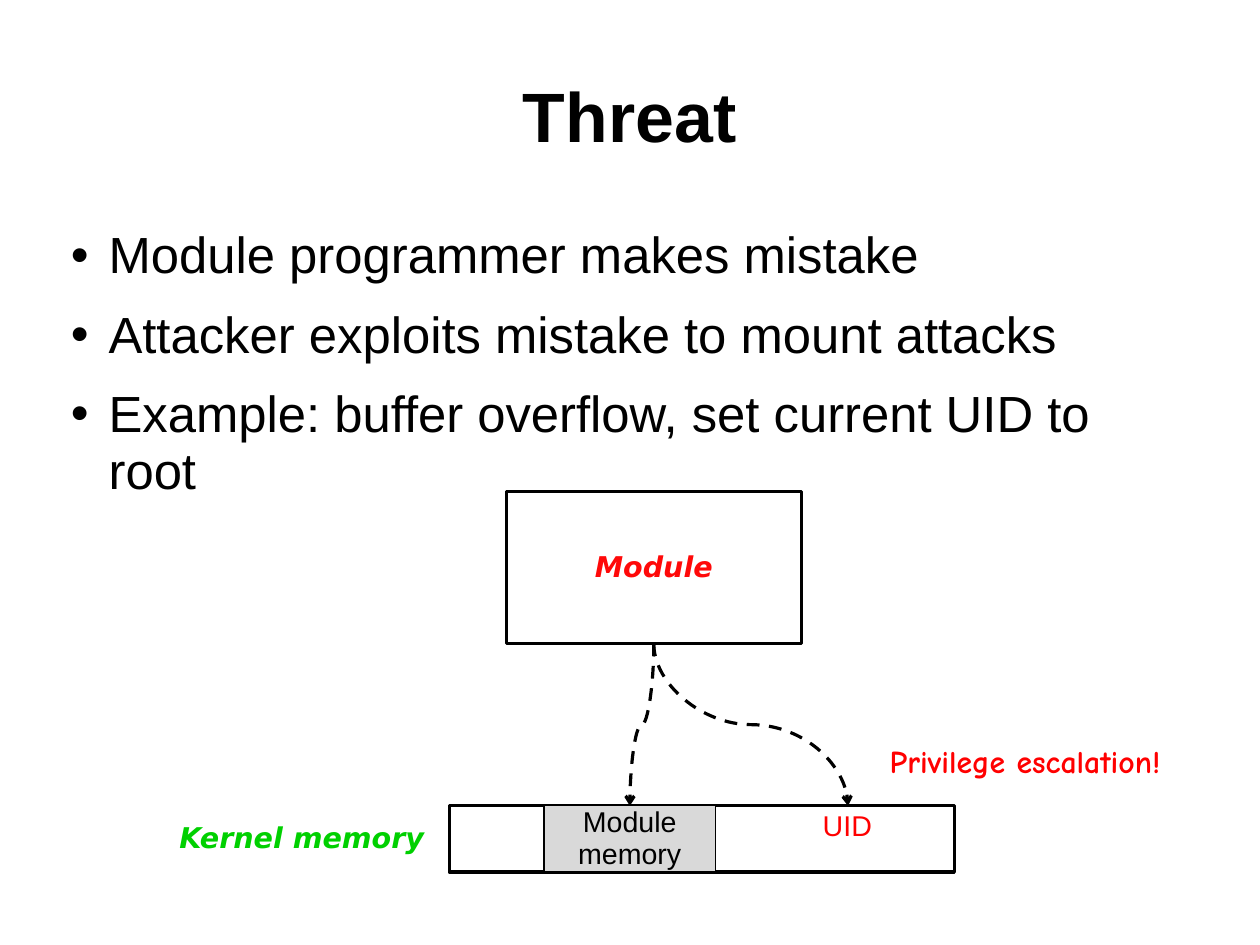
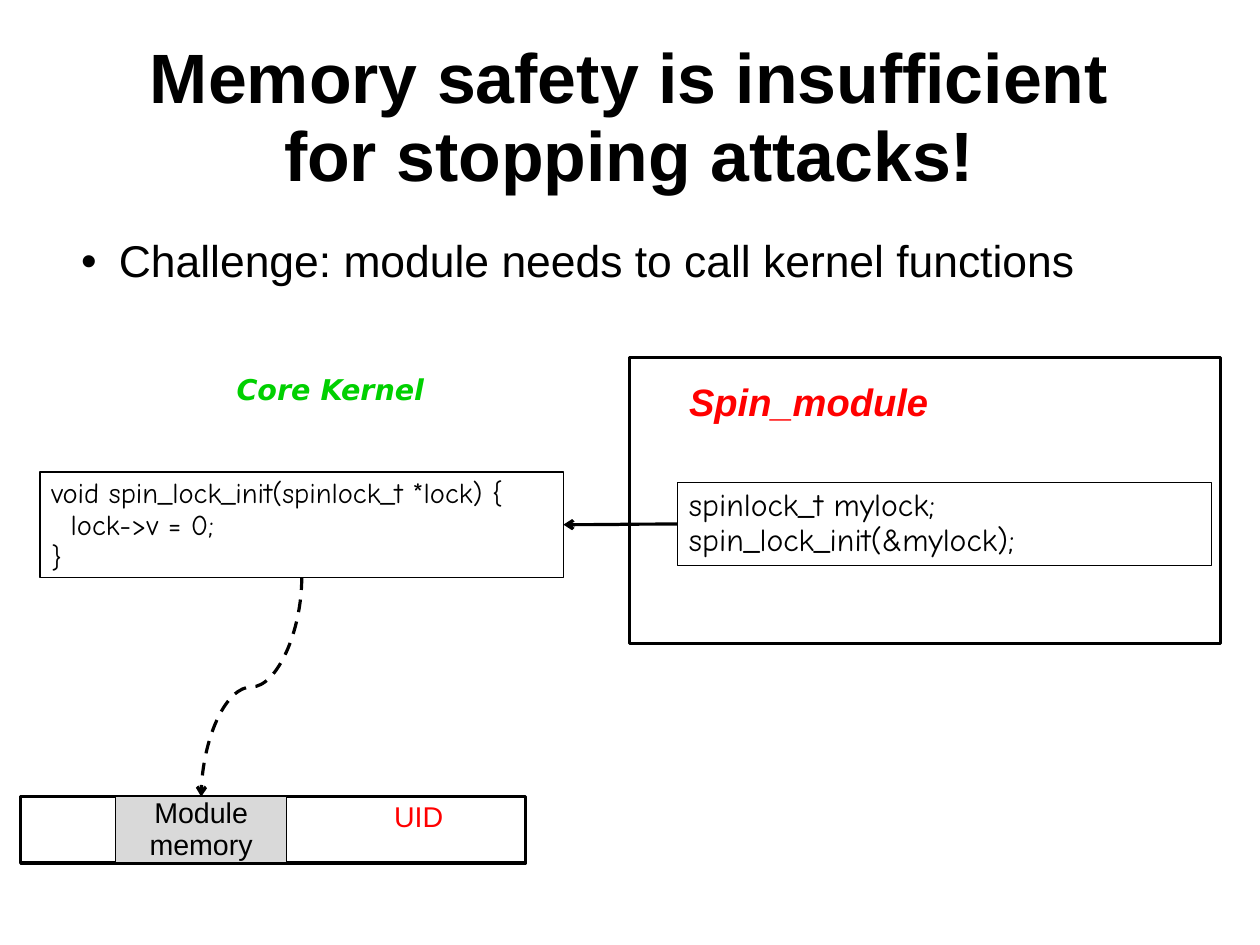
from lxml import etree
from pptx import Presentation
from pptx.dml.color import RGBColor
from pptx.enum.dml import MSO_LINE
from pptx.enum.shapes import MSO_CONNECTOR as Connector, MSO_SHAPE as Shape
from pptx.enum.text import MSO_ANCHOR as Anchor, PP_ALIGN as Align
from pptx.oxml.ns import qn
from pptx.util import Inches, Pt

COLORS = {
    "black": "000000",
    "white": "FFFFFF",
    "grey": "D9D9D9",
    "red": "FF0000",
    "module": "FF0909",
    "kernel": "00D000",
}
TOP, LEFT, BOTTOM, RIGHT = range(4)  # connection sites of a rectangle


def add_box(shapes, left, top, width, height, text="", size=18, font="Arial",
            color="black", bold=False, italic=False, align=Align.LEFT,
            anchor=Anchor.TOP, insets=(0.1, 0.05, 0.1, 0.05), wrap=True,
            bullet=False, fill=None, line=0):
    """Add a rectangle if it has a fill or line, else a text box; one paragraph per text line."""
    place = [Inches(value) for value in (left, top, width, height)]
    if fill or line:
        box = shapes.add_shape(Shape.RECTANGLE, *place)
        box.shadow.inherit = False
    else:
        box = shapes.add_textbox(*place)
    if fill:
        box.fill.solid()
        box.fill.fore_color.rgb = RGBColor.from_string(COLORS[fill])
    else:
        box.fill.background()
    if line:
        box.line.color.rgb = RGBColor.from_string(COLORS["black"])
        box.line.width = Pt(line)
    else:
        box.line.fill.background()

    frame = box.text_frame
    frame.word_wrap = wrap
    frame.vertical_anchor = anchor
    (frame.margin_left, frame.margin_top,
     frame.margin_right, frame.margin_bottom) = [Inches(inset) for inset in insets]
    if not text:
        return box
    for index, words in enumerate(text.split("\n")):
        para = frame.add_paragraph() if index else frame.paragraphs[0]
        para.alignment = align
        para.line_spacing = 0.93
        if bullet:
            para.space_after = Pt(14.2)
            properties = para._p.get_or_add_pPr()
            properties.set("marL", str(Inches(0.44)))
            properties.set("indent", str(Inches(-0.33)))
            etree.SubElement(properties, qn("a:buFont")).set("typeface", font)
            etree.SubElement(properties, qn("a:buChar")).set("char", "•")
        span = para.add_run()
        span.text = words
        span.font.size = Pt(size)
        span.font.name = font
        span.font.bold = bold
        span.font.italic = italic
        span.font.color.rgb = RGBColor.from_string(COLORS[color])
    return box


def add_arrow(slide, source, source_site, target, target_site, dashed=False):
    """Glue a curved arrow to two boxes; a dashed one leaves downwards."""
    arrow = slide.shapes.add_connector(Connector.CURVE, 0, 0, 0, 0)
    arrow.begin_connect(source, source_site)
    arrow.end_connect(target, target_site)
    arrow.line.color.rgb = RGBColor.from_string(COLORS["black"])
    arrow.line.width = Pt(2)
    if dashed:
        arrow.line.dash_style = MSO_LINE.DASH
        # A quarter turn about the centre swaps the width and height.
        leftwards = arrow.end_x < arrow.begin_x
        left, top, width, height = arrow.left, arrow.top, arrow.width, arrow.height
        arrow.left = left + (width - height) // 2
        arrow.top = top + (height - width) // 2
        arrow.width, arrow.height = height, width
        frame = arrow._element.spPr.find(qn("a:xfrm"))
        frame.set("rot", str((90 if leftwards else 270) * 60000))
        frame.set("flipH", "0" if leftwards else "1")
    etree.SubElement(arrow.line._get_or_add_ln(), qn("a:tailEnd")).set("type", "arrow")
    etree.SubElement(arrow._element.spPr, qn("a:effectLst"))


deck = Presentation()
# 28 by 21 centimetres
deck.slide_width, deck.slide_height = Inches(28 / 2.54), Inches(21 / 2.54)

CENTERED = {"align": Align.CENTER, "anchor": Anchor.MIDDLE}
LABEL = {"font": "DejaVu Sans", "bold": True, "italic": True, **CENTERED}
CODE = {"font": "Comic Neue", "line": 0.75}

# Title, bullets and memory bar of each slide
outlines = [
    ("Threat",
     "Module programmer makes mistake\n"
     "Attacker exploits mistake to mount attacks\n"
     "Example: buffer overflow, set current UID to root",
     32, (0.51, 1.97), (3.93, 7.05)),
    ("Memory safety is insufficient\nfor stopping attacks!",
     "Challenge: module needs to call kernel functions",
     28, (0.6, 2.05), (0.18, 6.97)),
]
pages = []
for title, bullets, bullet_size, (body_left, body_top), (bar_left, bar_top) in outlines:
    slide = deck.slides.add_slide(deck.slide_layouts[6])
    add_box(slide.shapes, 0.55, 0.38, 9.92, 1.28, title, size=44, bold=True,
            insets=(0, 0.04, 0, 0), **CENTERED)
    add_box(slide.shapes, body_left, body_top, 9.92, 5.45, bullets, size=bullet_size,
            insets=(0, 0.03, 0, 0), bullet=True)
    bar = slide.shapes.add_group_shape().shapes
    add_box(bar, bar_left, bar_top, 4.42, 0.58, line=2)
    module_memory = add_box(bar, bar_left + 0.83, bar_top, 1.5, 0.58, "Module memory",
                            fill="grey", line=0.75, **CENTERED)
    uid = add_box(bar, bar_left + 3.17, bar_top, 0.64, 0.38, "UID", color="red", wrap=False)
    pages.append((slide, module_memory, uid))

# Threat: the module reaches its own memory and the UID
slide, module_memory, uid = pages[0]
module = add_box(slide.shapes, 4.43, 4.3, 2.58, 1.33, "Module", color="module",
                 line=2, **LABEL)
for target in (module_memory, uid):
    add_arrow(slide, module, BOTTOM, target, TOP, dashed=True)
add_box(slide.shapes, 1.35, 7.05, 2.58, 0.58, "Kernel memory", color="kernel", **LABEL)
add_box(slide.shapes, 7.51, 6.47, 2.92, 0.33, "Privilege escalation!", size=20,
        font="Comic Neue", color="red", bold=True, align=Align.CENTER, fill="white")

# Memory safety: the module calls a kernel function that writes to memory
slide, module_memory, uid = pages[1]
add_box(slide.shapes, 5.51, 3.13, 5.17, 2.5, line=2)
add_box(slide.shapes, 5.93, 3.3, 3.08, 0.48, "Spin_module", size=24, color="red",
        bold=True, italic=True)
caller = add_box(slide.shapes, 5.93, 4.22, 4.67, 0.73,
                 "spinlock_t mylock;\nspin_lock_init(&mylock);", size=20, **CODE)
add_box(slide.shapes, 1.93, 3.13, 1.92, 0.58, "Core Kernel", color="kernel", **LABEL)
kernel_function = add_box(slide.shapes, 0.35, 4.13, 4.58, 0.92,
                          "void spin_lock_init(spinlock_t *lock) {\nlock->v = 0;\n}",
                          fill="white", **CODE)
statement = kernel_function.text_frame.paragraphs[1]
statement._p.get_or_add_pPr().set("marL", str(Inches(0.17)))
add_arrow(slide, caller, LEFT, kernel_function, RIGHT)
add_arrow(slide, kernel_function, BOTTOM, module_memory, TOP, dashed=True)

deck.save("out.pptx")
